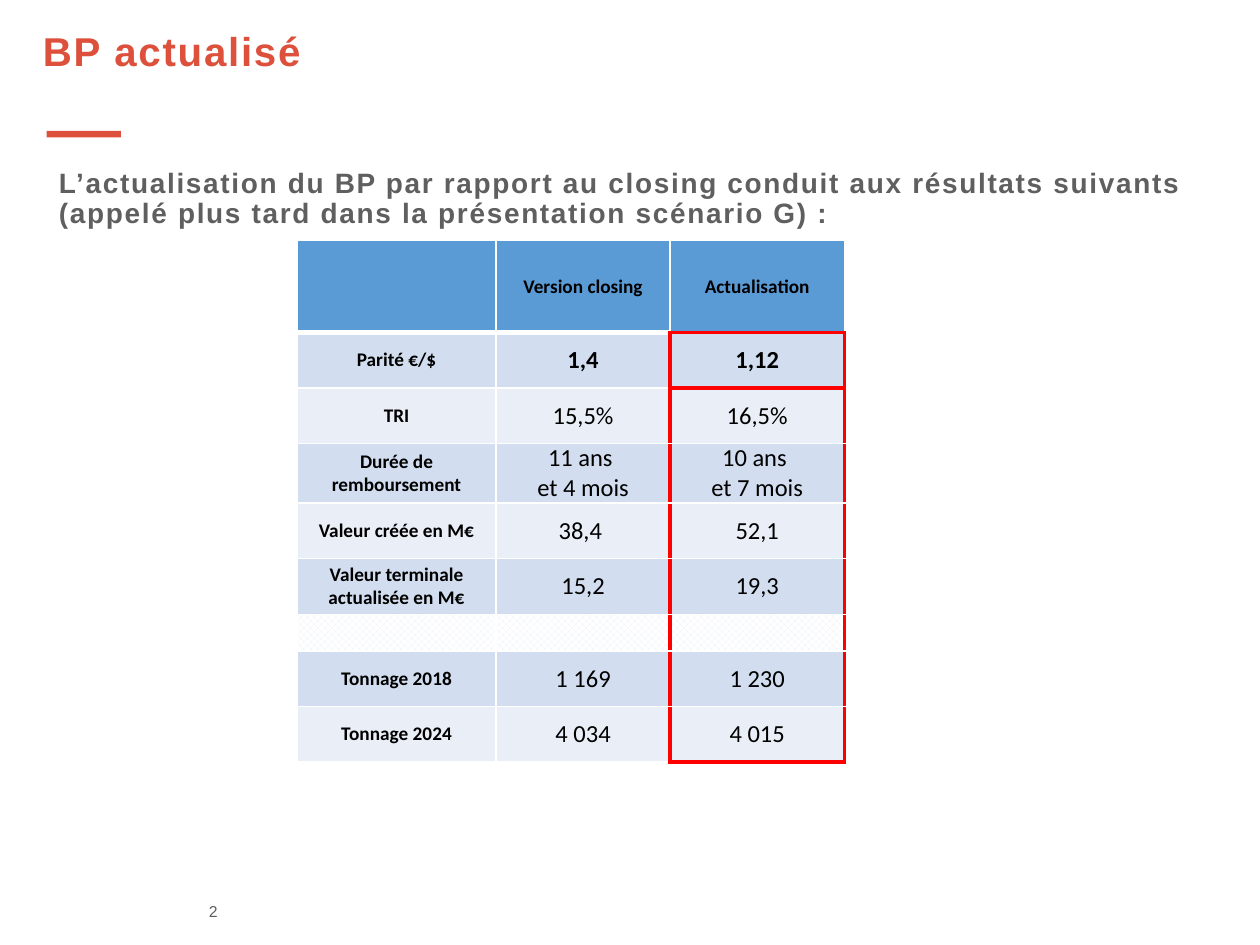
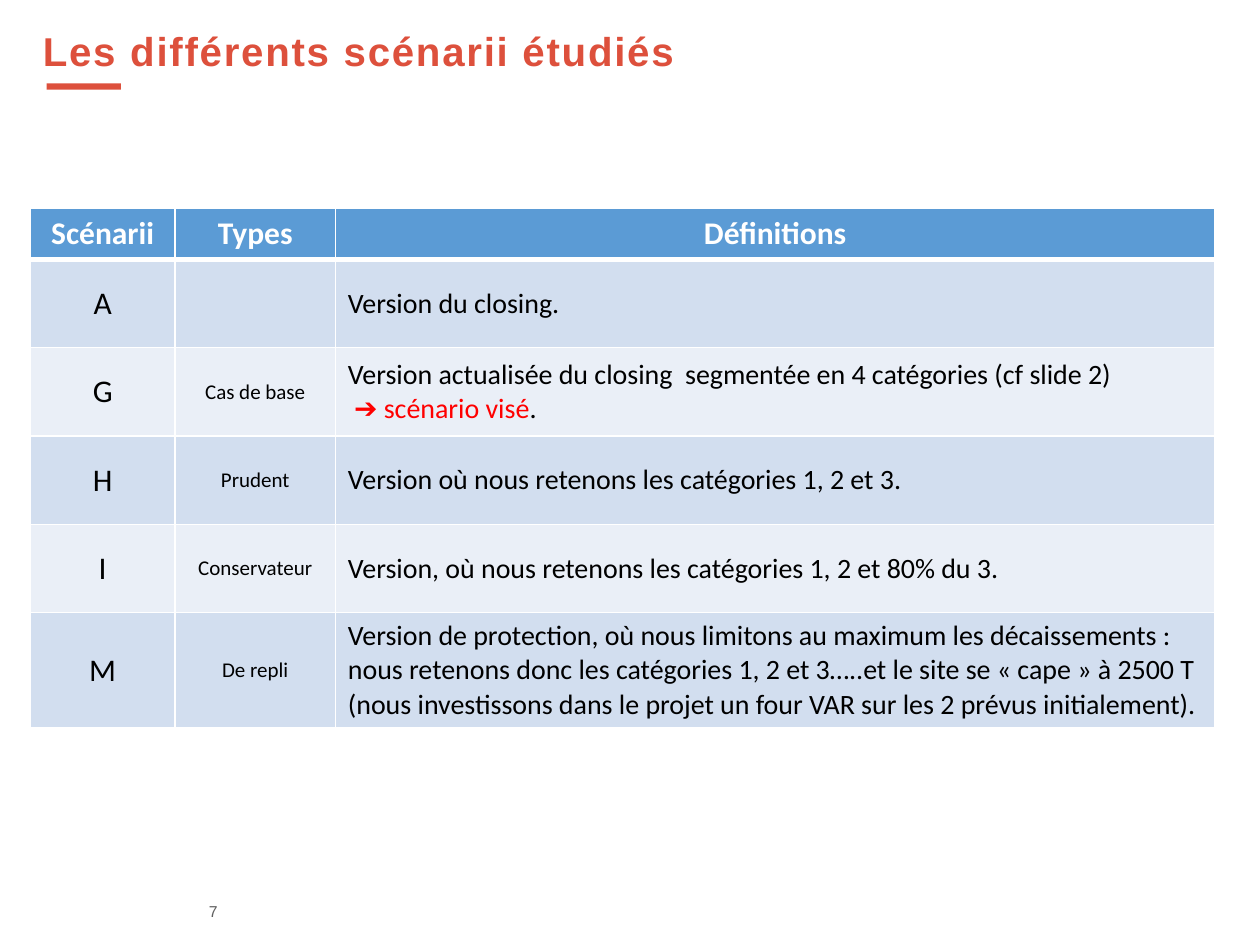
from lxml import etree
from pptx import Presentation
from pptx.dml.color import RGBColor
from pptx.enum.dml import MSO_PATTERN
from pptx.enum.shapes import MSO_SHAPE
from pptx.enum.text import MSO_ANCHOR, MSO_AUTO_SIZE, PP_ALIGN
from pptx.oxml.ns import qn
from pptx.util import Cm, Pt

COLORS = {
    "accent": "DD503C",
    "grey": "5F5F5F",
    "header": "5B9BD5",
    "dark_band": "D2DEEF",
    "light_band": "EAEFF7",
    "white": "FFFFFF",
    "black": "000000",
    "red": "FF0000",
}

PLAN = {
    "title": "BP actualisé",
    "number": "2",
    "bar_top": 2.64,
    "intro": "L’actualisation du BP par rapport au closing conduit aux résultats "
             "suivants (appelé plus tard dans la présentation scénario G) :",
    "rows": [
        ("", "Version closing", "Actualisation"),
        ("Parité €/$", "1,4", "1,12"),
        ("TRI", "15,5%", "16,5%"),
        ("Durée de remboursement", "11 ans \net 4 mois", "10 ans \net 7 mois"),
        ("Valeur créée en M€", "38,4 ", "52,1"),
        ("Valeur terminale actualisée en M€", "15,2", "19,3"),
        ("", "", ""),
        ("Tonnage 2018", "1 169", "1 230"),
        ("Tonnage 2024", "4 034", "4 015"),
    ],
}

SCENARIOS = {
    "title": "Les différents scénarii étudiés",
    "number": "7",
    "bar_top": 1.68,
    "highlight": "➔ scénario visé",
    "rows": [
        ("Scénarii", "Types", "Définitions"),
        ("A", "", "Version du closing."),
        ("G", "Cas de base",
         "Version actualisée du closing  segmentée en 4 catégories (cf slide 2)\n"
         " ➔ scénario visé."),
        ("H", "Prudent", "Version où nous retenons les catégories 1, 2 et 3."),
        ("I", "Conservateur",
         "Version, où nous retenons les catégories 1, 2 et 80% du 3."),
        ("M", "De repli",
         "Version de protection, où nous limitons au maximum les décaissements : "
         "nous retenons donc les catégories 1, 2 et 3…..et le site se «\u00a0cape\u00a0» "
         "à 2500 T (nous investissons dans le projet un four VAR sur les 2 prévus "
         "initialement)."),
    ],
}


def rgb(name):
    return RGBColor.from_string(COLORS[name])


def style_runs(p, size, color, bold=False, font="Arial", spacing=None):
    for r in p.runs:
        r.font.name = font
        r.font.size = Pt(size)
        r.font.bold = bold
        r.font.color.rgb = rgb(color)
        if spacing:
            r._r.get_or_add_rPr().set("spc", str(spacing * 100))


def fill_text(sp, text, size, color, bold=False, spacing=None, line_spacing=None,
              anchor=MSO_ANCHOR.TOP):
    tf = sp.text_frame
    tf.word_wrap = True
    tf.auto_size = MSO_AUTO_SIZE.NONE
    tf.vertical_anchor = anchor
    tf.text = text
    p = tf.paragraphs[0]
    p.alignment = PP_ALIGN.LEFT
    p.line_spacing = line_spacing
    style_runs(p, size, color, bold, spacing=spacing)


def add_base_slide(prs, content):
    """Add a slide with its title, accent bar and page number."""
    slide = prs.slides.add_slide(prs.slide_layouts[5])
    title = slide.shapes.title
    title.left, title.top, title.width, title.height = Cm(0.61), Cm(0.51), Cm(21.9), Cm(1.83)
    fill_text(title, content["title"], 23, "accent", True, 1, 0.9)

    bar = slide.shapes.add_shape(MSO_SHAPE.RECTANGLE, Cm(0.94), Cm(content["bar_top"]),
                                 Cm(1.5), Cm(0.13))
    bar.shadow.inherit = False
    bar.fill.solid()
    bar.fill.fore_color.rgb = rgb("accent")
    bar.line.fill.background()

    number = slide.shapes.add_textbox(Cm(3.96), Cm(18.14), Cm(0.94), Cm(0.46))
    fill_text(number, content["number"], 9, "grey", anchor=MSO_ANCHOR.MIDDLE)
    return slide


def add_grid(slide, rows, left, top, widths, heights):
    table = slide.shapes.add_table(len(rows), len(widths), Cm(left), Cm(top),
                                   Cm(sum(widths)), Cm(sum(heights))).table
    for column, width in zip(table.columns, widths):
        column.width = Cm(width)
    for row, height in zip(table.rows, heights):
        row.height = Cm(height)
    return table


def set_borders(cell, **special):
    """Draw white 1 pt borders, except sides given as L, R, T or B = (colour, points)."""
    tcPr = cell._tc.get_or_add_tcPr()
    for side in "LRTB":
        color, width = special.get(side, ("white", 1))
        ln = etree.SubElement(tcPr, qn(f"a:ln{side}"), w=str(Pt(width)))
        fill = etree.SubElement(ln, qn("a:solidFill"))
        etree.SubElement(fill, qn("a:srgbClr"), val=COLORS[color])


def fill_band(cell, row):
    cell.fill.solid()
    band = "header" if row == 0 else "dark_band" if row % 2 else "light_band"
    cell.fill.fore_color.rgb = rgb(band)


def fill_cell(cell, text, size, color="black", bold=False, align=PP_ALIGN.CENTER):
    cell.vertical_anchor = MSO_ANCHOR.MIDDLE
    cell.text = text
    for p in cell.text_frame.paragraphs:
        p.alignment = align
        style_runs(p, size, color, bold, "Calibri")
        if not p.runs:
            etree.SubElement(p._p, qn("a:endParaRPr"), sz=str(size * 100))


def highlight(p, phrase):
    """Split the paragraph around the phrase and turn the phrase red."""
    size = p.runs[0].font.size.pt
    parts = p.text.partition(phrase)
    p.text = ""
    for part in parts:
        p.add_run().text = part
    style_runs(p, size, "black", font="Calibri")
    p.runs[1].font.color.rgb = rgb("red")


def plan_borders(row, col, last):
    """Frame the last column, and its first value, in red."""
    frame = ("red", 2.25)
    sides = {}
    if row == 0:
        sides["B"] = ("white", 3)
    elif row == 1:
        sides["T"] = ("white", 3)
    if col == 2:
        if row > 0:
            sides["L"] = sides["R"] = frame
        if row in (1, 2):
            sides["T"] = frame
        if row in (0, 1, last):
            sides["B"] = frame
    elif col == 1 and row > 0:
        sides["R"] = frame
    return sides


def build_plan(prs):
    slide = add_base_slide(prs, PLAN)
    rows = PLAN["rows"]
    last = len(rows) - 1
    heights = [1.85] + [1.12 if any(row) else 0.74 for row in rows[1:]]
    table = add_grid(slide, rows, 5.99, 4.85, [4.01, 3.51, 3.51], heights)
    for i, row in enumerate(rows):
        for j, text in enumerate(row):
            cell = table.cell(i, j)
            cell.margin_left = cell.margin_right = cell.margin_top = cell.margin_bottom = 0
            is_label = i == 0 or j == 0 or not text
            fill_cell(cell, text, 11 if is_label else 14, bold=is_label or i == 1)
            set_borders(cell, **plan_borders(i, j, last))
            if any(row):
                fill_band(cell, i)
            else:
                cell.fill.patterned()
                cell.fill.pattern = MSO_PATTERN.LARGE_CHECKER_BOARD
                cell.fill.fore_color.rgb = rgb("light_band")
                cell.fill.back_color.rgb = rgb("white")

    intro = slide.shapes.add_textbox(Cm(0.94), Cm(3.28), Cm(24.18), Cm(4.17))
    fill_text(intro, PLAN["intro"], 16, "grey", True, 1, 0.9)


def build_scenarios(prs):
    slide = add_base_slide(prs, SCENARIOS)
    rows = SCENARIOS["rows"]
    sizes = [18, 12, 16]
    table = add_grid(slide, rows, 0.61, 4.19, [2.92, 3.23, 17.73],
                     [1.04] + [1.78] * (len(rows) - 1))
    for i, row in enumerate(rows):
        for j, text in enumerate(row):
            cell = table.cell(i, j)
            if i == 0:
                fill_cell(cell, text, 18, "white", True)
                set_borders(cell, B=("white", 3))
            else:
                fill_cell(cell, text, sizes[j],
                          align=PP_ALIGN.LEFT if j == 2 else PP_ALIGN.CENTER)
                set_borders(cell, **({"T": ("white", 3)} if i == 1 else {}))
            fill_band(cell, i)
            for p in cell.text_frame.paragraphs:
                if SCENARIOS["highlight"] in p.text:
                    highlight(p, SCENARIOS["highlight"])


def main():
    prs = Presentation()
    prs.slide_width, prs.slide_height = Cm(25.4), Cm(19.05)
    build_plan(prs)
    build_scenarios(prs)
    prs.save("out.pptx")


if __name__ == "__main__":
    main()
